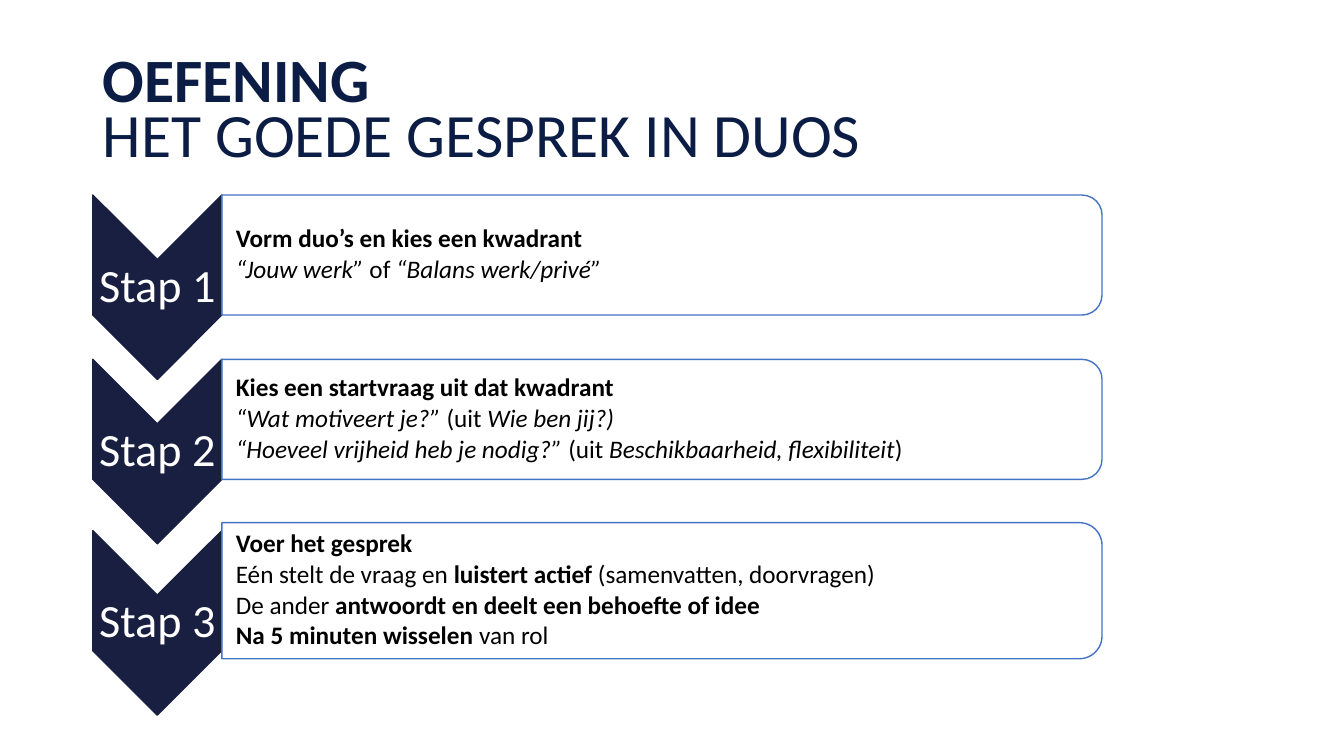
from dataclasses import dataclass
from typing import Any, NamedTuple

from lxml import etree
from pptx import Presentation
from pptx.dml.color import RGBColor
from pptx.enum.shapes import MSO_SHAPE
from pptx.enum.text import MSO_ANCHOR, MSO_AUTO_SIZE, PP_ALIGN
from pptx.oxml.ns import qn
from pptx.util import Inches, Pt

CHEVRON = MSO_SHAPE.CHEVRON
ROUNDED_PANEL = MSO_SHAPE.ROUND_2_SAME_RECTANGLE
MIDDLE = MSO_ANCHOR.MIDDLE
NO_AUTOFIT = MSO_AUTO_SIZE.NONE
LEFT, CENTER = PP_ALIGN.LEFT, PP_ALIGN.CENTER
TITLE_ONLY = 5


@dataclass(frozen=True)
class Theme:
    font: str = "Calibri"
    title_color: RGBColor = RGBColor(0x0B, 0x1D, 0x45)
    navy: RGBColor = RGBColor(0x18, 0x1F, 0x40)
    blue: RGBColor = RGBColor(0x44, 0x72, 0xC4)
    white: RGBColor = RGBColor(0xFF, 0xFF, 0xFF)
    black: RGBColor = RGBColor(0, 0, 0)
    title_size: int = 44
    label_size: int = 33
    body_size: int = 18


class Run(NamedTuple):
    text: str
    bold: bool = False
    italic: bool = False


class Box(NamedTuple):
    center_x: float
    center_y: float
    width: float
    height: float

    def lengths(self) -> list[int]:
        left, top = self.center_x - self.width / 2, self.center_y - self.height / 2
        return [Inches(value) for value in (left, top, self.width, self.height)]


@dataclass(frozen=True)
class Step:
    label: str
    center_y: float
    panel_height: float
    lines: list[list[Run]]


THEME = Theme()
CHEVRON_X, CHEVRON_DROP = 1.56, 0.32
PANEL_LEFT, PANEL_WIDTH = 2.2, 8.73

STEPS = [
    Step("Stap 1", 2.53, 1.19, [
        [Run("Vorm duo’s en kies een kwadrant", bold=True)],
        [Run("“Jouw werk”", italic=True), Run(" of "),
         Run("“Balans werk/privé”", italic=True)],
    ]),
    Step("Stap 2", 4.16, 1.19, [
        [Run("Kies een startvraag uit dat kwadrant", bold=True)],
        [Run("“Wat motiveert je?”", italic=True), Run(" (uit "),
         Run("Wie ben jij?)", italic=True)],
        [Run("“Hoeveel vrijheid heb je nodig?”", italic=True), Run(" (uit "),
         Run("Beschikbaarheid, flexibiliteit", italic=True), Run(")")],
    ]),
    Step("Stap 3", 5.86, 1.35, [
        [Run("Voer het gesprek", bold=True)],
        [Run("Eén stelt de vraag en "), Run("luistert actief", bold=True),
         Run(" (samenvatten, doorvragen)")],
        [Run("De ander "), Run("antwoordt en deelt een behoefte of idee", bold=True)],
        [Run("Na 5 minuten wisselen", bold=True), Run(" van rol")],
    ]),
]


def apply_format(target: Any, values: dict[str, Any]) -> None:
    for name, value in values.items():
        setattr(target, name, value)


def add_run(paragraph: Any, content: Run, size: int, color: RGBColor) -> None:
    run = paragraph.add_run()
    run.text = content.text
    apply_format(run.font, {"name": THEME.font, "size": Pt(size),
                            "bold": content.bold, "italic": content.italic})
    run.font.color.rgb = color


def add_turned_shape(slide: Any, kind: Any, box: Box, fill: RGBColor, line: RGBColor) -> Any:
    """Add a shape turned a quarter; box is its size before turning."""
    shape = slide.shapes.add_shape(kind, *box.lengths())
    shape.rotation = 90
    shape.shadow.inherit = False
    shape.fill.solid()
    shape.fill.fore_color.rgb = fill
    shape.line.color.rgb = line
    shape.line.width = Pt(1)
    return shape


def set_opacity(shape: Any, percent: int) -> None:
    color = shape.element.spPr.find(qn("a:solidFill"))[0]
    etree.SubElement(color, qn("a:alpha"), val=str(percent * 1000))


def add_text(slide: Any, box: Box, lines: list[list[Run]], size: int, color: RGBColor,
             alignment: Any, left_inset: float, inset: float) -> None:
    frame = slide.shapes.add_textbox(*box.lengths()).text_frame
    apply_format(frame, {
        "word_wrap": True, "auto_size": NO_AUTOFIT, "vertical_anchor": MIDDLE,
        "margin_left": Inches(left_inset), "margin_right": Inches(inset),
        "margin_top": Inches(inset), "margin_bottom": Inches(inset)})
    for index, runs in enumerate(lines):
        paragraph = frame.add_paragraph() if index else frame.paragraphs[0]
        apply_format(paragraph, {"alignment": alignment, "line_spacing": 0.9,
                                 "space_after": Pt(2.4)})
        for content in runs:
            add_run(paragraph, content, size, color)


def add_title(slide: Any) -> None:
    title = slide.shapes.title
    apply_format(title, {"left": Inches(0.92), "top": Inches(0.4),
                         "width": Inches(8.2), "height": Inches(1.45)})
    apply_format(title.text_frame, {"word_wrap": True, "auto_size": NO_AUTOFIT,
                                    "vertical_anchor": MIDDLE})
    paragraph = title.text_frame.paragraphs[0]
    apply_format(paragraph, {"alignment": LEFT, "line_spacing": 0.75})
    add_run(paragraph, Run("OEFENING ", bold=True), THEME.title_size, THEME.title_color)
    paragraph.add_line_break()
    add_run(paragraph, Run("HET GOEDE GESPREK IN DUOS"), THEME.title_size, THEME.title_color)


def add_step(slide: Any, step: Step) -> None:
    # Chevron and its label
    chevron_y = step.center_y + CHEVRON_DROP
    add_turned_shape(slide, CHEVRON, Box(CHEVRON_X, chevron_y, 1.83, 1.28),
                     THEME.navy, THEME.navy)
    add_text(slide, Box(CHEVRON_X, chevron_y, 1.28, 0.55), [[Run(step.label)]],
             THEME.label_size, THEME.white, CENTER, 0.02, 0.02)

    # Panel and its explanation
    panel_x = PANEL_LEFT + PANEL_WIDTH / 2
    panel = add_turned_shape(slide, ROUNDED_PANEL,
                             Box(panel_x, step.center_y, step.panel_height, PANEL_WIDTH),
                             THEME.white, THEME.blue)
    set_opacity(panel, 90)
    add_text(slide, Box(panel_x, step.center_y, PANEL_WIDTH, step.panel_height - 0.12),
             step.lines, THEME.body_size, THEME.black, LEFT, 0.14, 0.01)


def main() -> None:
    presentation = Presentation()
    presentation.slide_width = Inches(13.33)
    presentation.slide_height = Inches(7.5)
    slide = presentation.slides.add_slide(presentation.slide_layouts[TITLE_ONLY])
    add_title(slide)
    for step in STEPS:
        add_step(slide, step)
    presentation.save("out.pptx")


if __name__ == "__main__":
    main()
